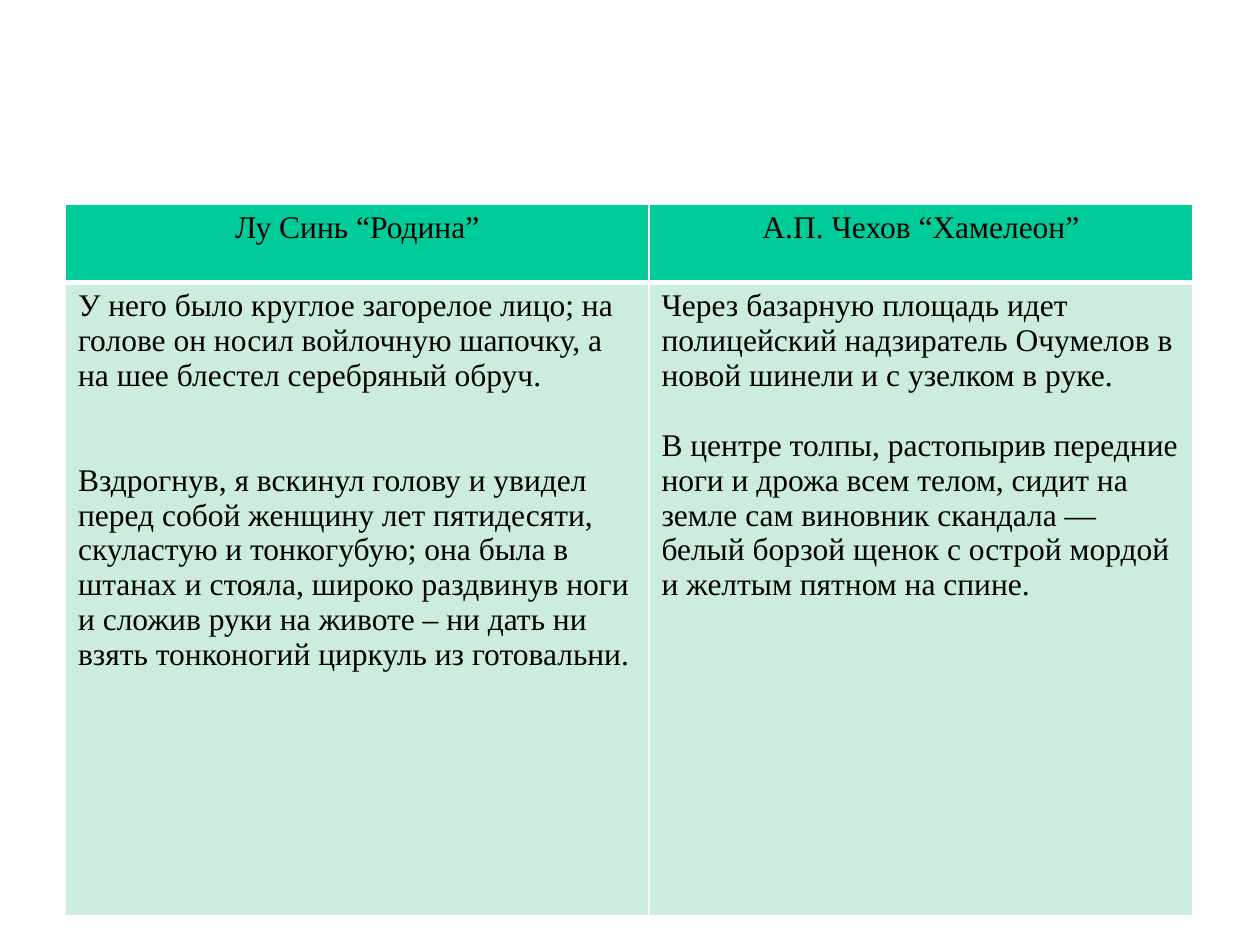
"""Build a slide comparing portraits by Lu Xun and Chekhov in a two-column table."""
from lxml.etree import SubElement
from pptx import Presentation
from pptx.dml.color import RGBColor
from pptx.enum.text import PP_ALIGN
from pptx.oxml.ns import qn
from pptx.util import Inches, Pt

COLORS = {"header": "00CC99", "body": "CCECDE", "text": "000000", "border": "FFFFFF"}
COLUMN_WIDTHS = [4.63, 4.32]
ROW_HEIGHTS = [0.62, 5.03]
LINE_PITCH = 20
ROWS = [
    [
        [("Лу Синь “Родина”", 0)],
        [("А.П. Чехов “Хамелеон”", 0)],
    ],
    [
        [
            ("У него было круглое загорелое лицо; на голове он носил войлочную шапочку, "
             "а на шее блестел серебряный обруч.", 0),
            ("Вздрогнув, я вскинул голову и увидел перед собой женщину лет пятидесяти, "
             "скуластую и тонкогубую; она была в штанах и стояла, широко раздвинув ноги "
             "и сложив руки на животе – ни дать ни взять тонконогий циркуль из готовальни.", 2),
        ],
        [
            ("Через базарную площадь идет полицейский надзиратель Очумелов "
             "в новой шинели и с узелком в руке.", 0),
            ("В центре толпы, растопырив передние ноги и дрожа всем телом, сидит на земле "
             "сам виновник скандала — белый борзой щенок с острой мордой "
             "и желтым пятном на спине.", 1),
        ],
    ],
]


def add_border(cell, side, width):
    line = SubElement(cell._tc.get_or_add_tcPr(), qn(f"a:ln{side}"), w=str(Pt(width)))
    fill = SubElement(line, qn("a:solidFill"))
    SubElement(fill, qn("a:srgbClr"), val=COLORS["border"])


deck = Presentation()
deck.slide_width, deck.slide_height = Inches(10), Inches(7.5)
page = deck.slides.add_slide(deck.slide_layouts[6])
table = page.shapes.add_table(
    len(ROW_HEIGHTS), len(COLUMN_WIDTHS), Inches(0.52), Inches(1.62),
    Inches(sum(COLUMN_WIDTHS)), Inches(sum(ROW_HEIGHTS)),
).table
for column, width in zip(table.columns, COLUMN_WIDTHS):
    column.width = Inches(width)

for row_index, (row, height) in enumerate(zip(table.rows, ROW_HEIGHTS)):
    row.height = Inches(height)
    is_header = row_index == 0
    divider = "B" if is_header else "T"
    for cell, passages in zip(row.cells, ROWS[row_index]):
        for side in "LRTB":
            add_border(cell, side, 3 if side == divider else 1)
        cell.fill.solid()
        cell.fill.fore_color.rgb = RGBColor.from_string(COLORS["header" if is_header else "body"])
        for index, (text, gap_lines) in enumerate(passages):
            para = cell.text_frame.paragraphs[0] if index == 0 else cell.text_frame.add_paragraph()
            para.alignment = PP_ALIGN.CENTER if is_header else PP_ALIGN.LEFT
            para.space_before = Pt(gap_lines * LINE_PITCH)
            span = para.add_run()
            span.text = text
            span.font.name = "Times New Roman"
            span.font.size = Pt(18)
            span.font.bold = False
            span.font.color.rgb = RGBColor.from_string(COLORS["text"])

deck.save("out.pptx")
